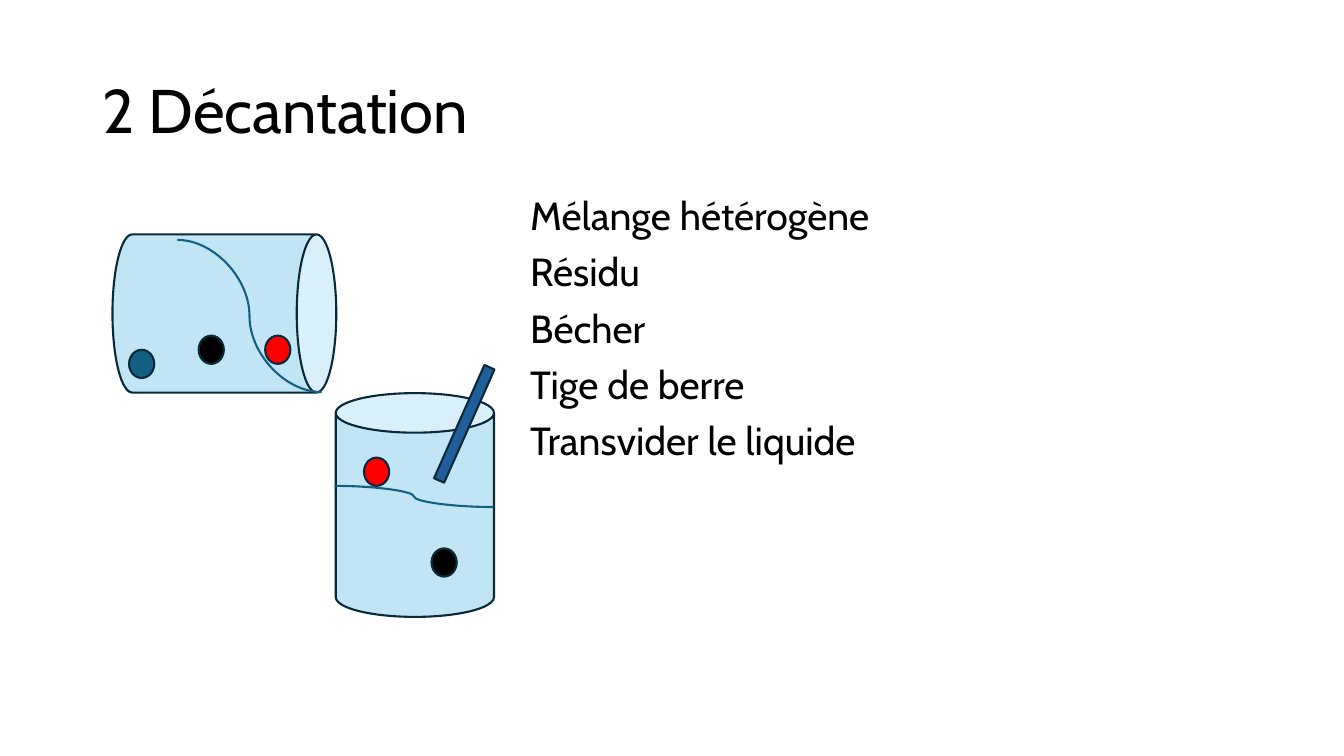
from dataclasses import dataclass

from lxml import etree
from pptx import Presentation
from pptx import util as u
from pptx.dml.color import RGBColor
from pptx.enum import shapes, text
from pptx.oxml import ns


@dataclass(frozen=True)
class Theme:
    font: str = "Cabin"
    title_size: int = 44
    body_size: int = 28
    line_width: float = 1.5
    ink: str = "000000"
    outline: str = "092A39"
    water: str = "C1E5F5"
    surface: str = "156082"
    red: str = "FF0000"
    rod: str = "215F9A"


THEME = Theme()
BEAKER_SIZE = (1.57, 2.22)
GRAIN_SIZE = (0.25, 0.28)


def inches(*lengths):
    return [u.Inches(length) for length in lengths]


def set_all(target, values):
    for name, value in values.items():
        setattr(target, name, value)


def style_line(line, color):
    line.color.rgb = RGBColor.from_string(color)
    line.width = u.Pt(THEME.line_width)


def add_text(page, place, lines, size, anchor, space_before=0):
    box = page.shapes.add_textbox(*inches(*place))
    frame = box.text_frame
    set_all(frame, {"word_wrap": True, "vertical_anchor": anchor})
    for index, line in enumerate(lines):
        para = frame.add_paragraph() if index else frame.paragraphs[0]
        set_all(para, {"line_spacing": 0.9, "space_before": u.Pt(space_before)})
        span = para.add_run()
        span.text = line
        set_all(span.font, {"name": THEME.font, "size": u.Pt(size)})
        span.font.color.rgb = RGBColor.from_string(THEME.ink)


def add_solid(page, kind, corner, size, fill, rotation=0):
    shape = page.shapes.add_shape(kind, *inches(*corner, *size))
    shape.rotation = rotation
    shape.shadow.inherit = False
    shape.fill.solid()
    shape.fill.fore_color.rgb = RGBColor.from_string(fill)
    style_line(shape.line, THEME.outline)


def add_beaker(page, corner, rotation=0):
    add_solid(page, shapes.MSO_SHAPE.CAN, corner, BEAKER_SIZE, THEME.water, rotation)


def add_liquid_level(page, start, end):
    curve = page.shapes.add_connector(
        shapes.MSO_CONNECTOR.CURVE, *inches(*start, *end))
    style_line(curve.line, THEME.surface)
    etree.SubElement(curve._element.spPr, ns.qn("a:effectLst"))


def add_grain(page, corner, fill):
    add_solid(page, shapes.MSO_SHAPE.OVAL, corner, GRAIN_SIZE, fill)


def main():
    deck = Presentation()
    set_all(deck, {"slide_width": u.Inches(13.33), "slide_height": u.Inches(7.5)})
    page = deck.slides.add_slide(deck.slide_layouts[6])

    # Title and vocabulary
    add_text(page, (0.92, 0.4, 11.5, 1.45), ["2 Décantation"],
             THEME.title_size, text.MSO_ANCHOR.MIDDLE)
    words = ["Mélange hétérogène", "Résidu", "Bécher", "Tige de berre",
             "Transvider le liquide"]
    add_text(page, (5.16, 1.9, 7.25, 4.85), words,
             THEME.body_size, text.MSO_ANCHOR.TOP, space_before=10)

    # Tilted beaker pouring into the upright one
    add_beaker(page, (1.44, 2), rotation=90)
    add_beaker(page, (3.33, 3.9))
    add_liquid_level(page, (1.76, 2.38), (3.19, 3.89))
    add_liquid_level(page, (3.32, 4.82), (4.89, 5.03))

    # Solid grains
    for corner, fill in [
        ((1.28, 3.47), THEME.surface),
        ((1.97, 3.33), THEME.ink),
        ((2.63, 3.33), THEME.red),
        ((4.28, 5.44), THEME.ink),
        ((3.61, 4.54), THEME.red),
    ]:
        add_grain(page, corner, fill)

    # Stirring rod
    add_solid(page, shapes.MSO_SHAPE.RECTANGLE, (4.55, 3.59), (0.11, 1.23),
              THEME.rod, rotation=24)

    deck.save("out.pptx")


if __name__ == "__main__":
    main()
